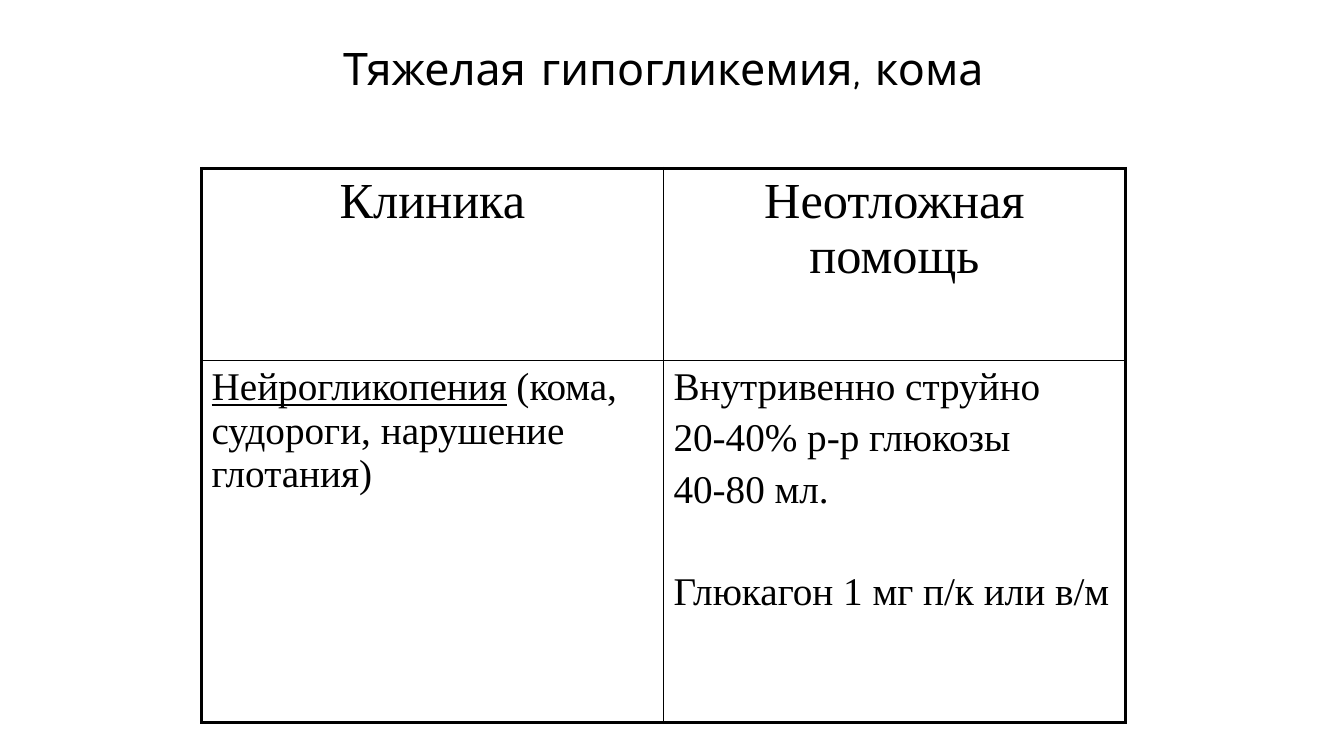
from lxml import etree
from pptx import Presentation
from pptx.dml.color import RGBColor
from pptx.enum import text
from pptx.oxml import ns
from pptx.util import Cm, Pt

BLACK = RGBColor(0x00, 0x00, 0x00)
WHITE = RGBColor(0xFF, 0xFF, 0xFF)
TITLE_FONT = "Comic Neue"
TABLE_FONT = "Times New Roman"
THICK, THIN = Pt(2.25), Pt(1)
HEADER_SIZE, BODY_SIZE = 36, 28
SPACE_SHARE = 0.2  # space before a paragraph, as a share of its text size
BODY_LINE = 31  # height in points of one body line

HEADERS = ["Клиника", "Неотложная помощь"]
TREATMENT = ["Внутривенно струйно", "20-40% р-р глюкозы", "40-80 мл."]
GLUCAGON = "Глюкагон 1 мг п/к или в/м"


def add_text(paragraph, content, size, font=TABLE_FONT, underline=False,
             align=text.PP_ALIGN.LEFT, before=0):
    """Add a formatted run and set its paragraph's layout."""
    paragraph.alignment = align
    paragraph.space_before = Pt(before)
    run = paragraph.add_run()
    run.text = content
    run.font.name = font
    run.font.size = Pt(size)
    run.font.bold = False
    run.font.underline = underline
    run.font.color.rgb = BLACK


def set_border(cell, side, width):
    properties = cell._tc.get_or_add_tcPr()
    line = etree.SubElement(properties, ns.qn(f"a:ln{side}"), w=str(int(width)))
    fill = etree.SubElement(line, ns.qn("a:solidFill"))
    etree.SubElement(fill, ns.qn("a:srgbClr"), val=str(BLACK))


def add_title(slide, content):
    title = slide.shapes.title
    title.left, title.top = Cm(5.93), Cm(0.64)
    title.width, title.height = Cm(21.59), Cm(2.11)
    title.text_frame.vertical_anchor = text.MSO_ANCHOR.MIDDLE
    add_text(title.text_frame.paragraphs[0], content, 32, font=TITLE_FONT,
             align=text.PP_ALIGN.CENTER)


def add_grid(slide, column_widths, row_heights):
    """Add a plain table with a thick frame and thin inner lines."""
    frame = slide.shapes.add_table(
        len(row_heights), len(column_widths), Cm(5.08), Cm(4.24),
        sum(column_widths), sum(row_heights))
    table = frame.table
    table.first_row = table.horz_banding = False
    for column, width in zip(table.columns, column_widths):
        column.width = width
    for row, height in zip(table.rows, row_heights):
        row.height = height

    last_row, last_column = len(row_heights) - 1, len(column_widths) - 1
    for row in range(last_row + 1):
        for column in range(last_column + 1):
            cell = table.cell(row, column)
            outer = {"L": column == 0, "R": column == last_column,
                     "T": row == 0, "B": row == last_row}
            for side, is_outer in outer.items():
                set_border(cell, side, THICK if is_outer else THIN)
            cell.fill.solid()
            cell.fill.fore_color.rgb = WHITE
    return table


def fill_table(table):
    # Header row
    for column, header in enumerate(HEADERS):
        paragraph = table.cell(0, column).text_frame.paragraphs[0]
        add_text(paragraph, header, HEADER_SIZE, align=text.PP_ALIGN.CENTER,
                 before=HEADER_SIZE * SPACE_SHARE)

    # Symptoms
    gap = BODY_SIZE * SPACE_SHARE
    symptoms = table.cell(1, 0).text_frame.paragraphs[0]
    add_text(symptoms, "Нейрогликопения", BODY_SIZE, underline=True, before=gap)
    add_text(symptoms, " (кома, судороги, нарушение глотания)", BODY_SIZE,
             before=gap)

    # Treatment, with the second option set apart by one line
    treatment = table.cell(1, 1).text_frame
    for index, content in enumerate(TREATMENT):
        paragraph = treatment.add_paragraph() if index else treatment.paragraphs[0]
        add_text(paragraph, content, BODY_SIZE, before=gap)
    add_text(treatment.add_paragraph(), GLUCAGON, BODY_SIZE,
             before=2 * gap + BODY_LINE)


def main():
    presentation = Presentation()
    presentation.slide_width, presentation.slide_height = Cm(33.87), Cm(19.05)
    title_only = presentation.slide_layouts[5]
    slide = presentation.slides.add_slide(title_only)

    add_title(slide, "Тяжелая гипогликемия, кома")
    table = add_grid(slide, [Cm(11.64)] * 2, [Cm(4.85), Cm(9.12)])
    fill_table(table)
    presentation.save("out.pptx")


if __name__ == "__main__":
    main()
